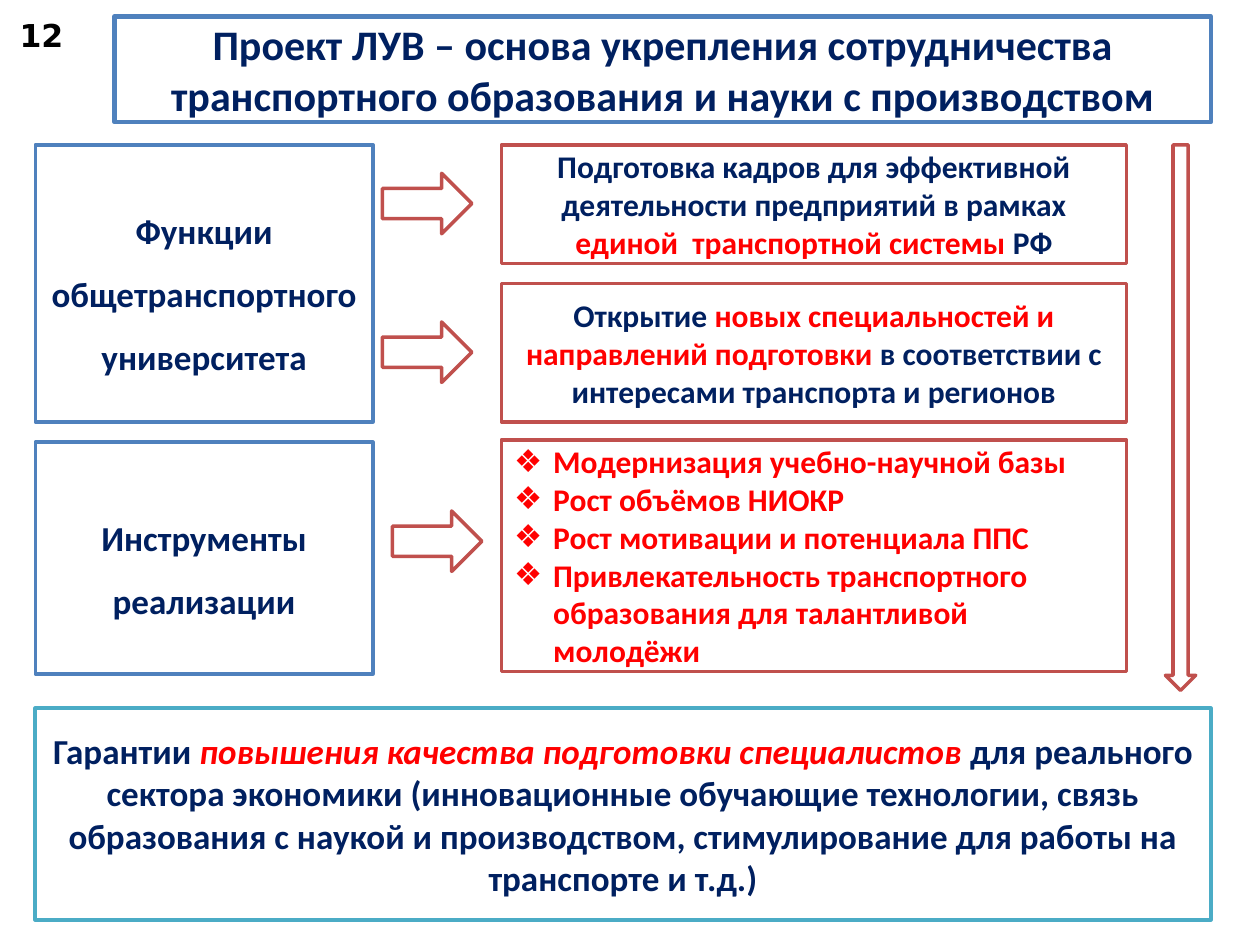
"""Build the slide on the transport university project."""
from dataclasses import dataclass

from lxml import etree
from pptx import Presentation
from pptx.dml.color import RGBColor as RGB
from pptx.enum.shapes import MSO_SHAPE as Shape
from pptx.enum.text import MSO_ANCHOR as Anchor, MSO_AUTO_SIZE as Fit, PP_ALIGN as Align
from pptx.oxml.ns import qn
from pptx.util import Inches, Pt


@dataclass(frozen=True)
class Theme:
    font: str = "Calibri"
    digit: str = "DejaVu Sans"
    navy: RGB = RGB(0x00, 0x20, 0x60)
    red: RGB = RGB(0xFF, 0x00, 0x00)
    black: RGB = RGB(0x00, 0x00, 0x00)
    white: RGB = RGB(0xFF, 0xFF, 0xFF)
    blue: RGB = RGB(0x4F, 0x81, 0xBD)
    brick: RGB = RGB(0xC0, 0x50, 0x4D)
    teal: RGB = RGB(0x4B, 0xAC, 0xC6)
    head: int = 24
    large: int = 20
    small: int = 18
    edge: float = 2
    frame: float = 2.5


theme = Theme()


def style(shape, box, line=None, width=theme.edge):
    shape.left, shape.top, shape.width, shape.height = map(Inches, box)
    if line is not None:
        shape.fill.solid()
        shape.fill.fore_color.rgb = theme.white
        shape.line.color.rgb = line
        shape.line.width = Pt(width)
    frame = shape.text_frame
    frame.word_wrap = True
    frame.auto_size = Fit.NONE
    frame.vertical_anchor = Anchor.MIDDLE


def write(shape, lines, size, color=theme.navy, align=Align.CENTER, space=1.0, face=theme.font):
    frame = shape.text_frame
    for i, parts in enumerate(lines):
        para = frame.add_paragraph() if i else frame.paragraphs[0]
        para.alignment, para.line_spacing = align, space
        para.space_before = Pt(0)
        font = para.font
        font.name, font.size, font.bold = face, Pt(size), True
        font.color.rgb = color
        for j, text in enumerate(parts):
            run = para.add_run()
            run.text = text
            if j % 2:
                run.font.color.rgb = theme.red


deck = Presentation()
deck.slide_width, deck.slide_height = Inches(10), Inches(7.5)
slide = deck.slides.add_slide(deck.slide_layouts[1])
shapes = slide.shapes

title = shapes.title
style(title, (0.91, 0.13, 8.7, 0.84), theme.blue, theme.frame)
write(title, [["Проект ЛУВ – основа укрепления сотрудничества "
               "транспортного образования и науки с производством"]], theme.head)

left, wide = 0.28, 2.68
right, broad = 3.98, 4.96
cards = [
    ((left, 5.62, 9.33, 1.68), theme.teal, theme.large, 1.0, [[
        "Гарантии ", "повышения качества подготовки специалистов ",
        "для реального сектора экономики (инновационные обучающие технологии, "
        "связь образования с наукой и производством, стимулирование для работы "
        "на транспорте и т.д.)"]]),
    ((left, 1.15, wide, 2.2), theme.blue, theme.large, 1.5,
     [["Функции общетранспортного университета"]]),
    ((left, 3.51, wide, 1.84), theme.blue, theme.large, 1.5,
     [["Инструменты"], ["реализации"]]),
    ((right, 1.15, broad, 0.94), theme.brick, theme.small, 1.0, [[
        "Подготовка кадров для эффективной деятельности предприятий в рамках ",
        "единой  транспортной системы ", "РФ"]]),
    ((right, 2.25, broad, 1.1), theme.brick, theme.small, 1.0, [[
        "Открытие ", "новых специальностей и направлений подготовки ",
        "в соответствии с интересами транспорта и регионов"]]),
]
made = []
for box, line, size, space, lines in cards:
    card = shapes.add_shape(Shape.RECTANGLE, *map(Inches, box))
    card.shadow.inherit = False
    style(card, box, line)
    write(card, lines, size, space=space)
    made.append(card)
made[0].text_frame.paragraphs[0].runs[1].font.italic = True

tools = slide.placeholders[1]
style(tools, (right, 3.49, broad, 1.84), theme.brick)
write(tools, [["Модернизация учебно-научной базы"],
              ["Рост объёмов НИОКР"],
              ["Рост мотивации и потенциала ППС"],
              ["Привлекательность транспортного образования для талантливой молодёжи"]],
      theme.small, theme.red, Align.LEFT)
for para in tools.text_frame.paragraphs:
    props = para._p.get_or_add_pPr()
    props.set("marL", str(Inches(0.31)))
    props.set("indent", str(-Inches(0.31)))
    mark = etree.Element(qn("a:buChar"), char="❖")
    props.find(qn("a:defRPr")).addprevious(mark)

arrows = [
    ((3.15, 1.26, 0.48, 0.71), 270),
    ((3.15, 2.44, 0.48, 0.71), 270),
    ((3.23, 3.94, 0.48, 0.71), 270),
    ((9.25, 1.15, 0.24, 4.33), 0),
]
for box, turn in arrows:
    arrow = shapes.add_shape(Shape.DOWN_ARROW, *map(Inches, box))
    arrow.shadow.inherit = False
    arrow.rotation = turn
    style(arrow, box, theme.brick)

box = (-0.12, 0.12, 0.9, 0.32)
page = shapes.add_textbox(*map(Inches, box))
style(page, box)
write(page, [["12"]], theme.small, theme.black, face=theme.digit)

deck.save("out.pptx")
